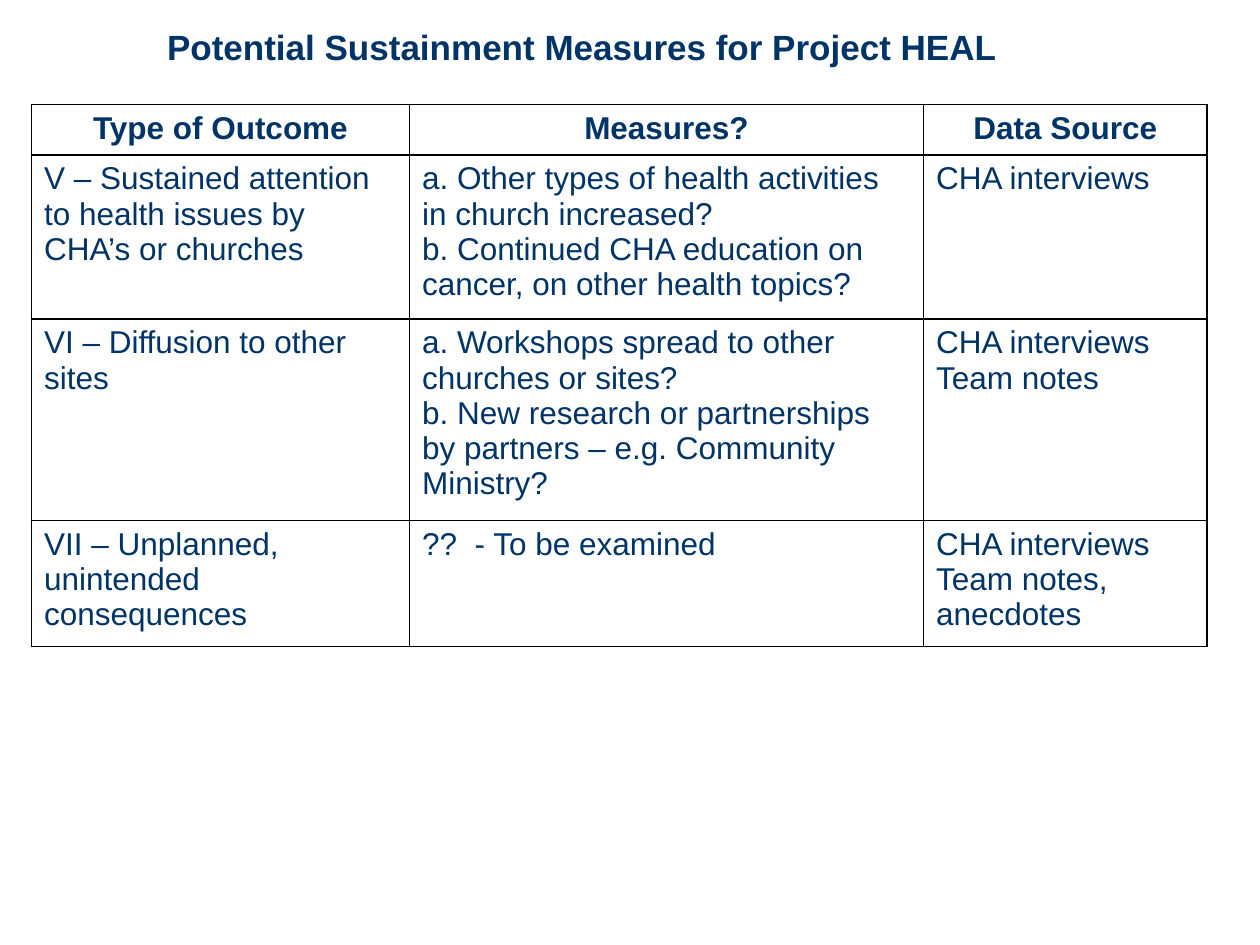
from dataclasses import dataclass

import pptx
import pptx.dml.color
import pptx.enum.text
import pptx.oxml
import pptx.oxml.ns
import pptx.presentation
import pptx.slide
import pptx.table
import pptx.util

Inches = pptx.util.Inches
Pt = pptx.util.Pt
Align = pptx.enum.text.PP_ALIGN


@dataclass(frozen=True)
class Theme:
    font: str = "Arial"
    ink: str = "003366"
    border: str = "000000"
    border_width: int = 1
    title_size: int = 20
    table_size: int = 18


@dataclass(frozen=True)
class Outcome:
    kind: str
    measures: str
    source: str
    height: float

    def texts(self) -> tuple[str, str, str]:
        return self.kind, self.measures, self.source


THEME = Theme()
COLUMN_WIDTHS = (3, 4.08, 2.25)
OUTCOMES = (
    Outcome("Type of Outcome", "Measures?", "Data Source", 0.4),
    Outcome(
        "V – Sustained attention to health issues by CHA’s or churches",
        "a. Other types of health activities in church increased?\n"
        "b. Continued CHA education on cancer, on other health topics?",
        "CHA interviews",
        1.3,
    ),
    Outcome(
        "VI – Diffusion to other sites",
        "a. Workshops spread to other churches or sites?\n"
        "b. New research or partnerships by partners – e.g. Community Ministry?",
        "CHA interviews\nTeam notes",
        1.6,
    ),
    Outcome(
        "VII – Unplanned, unintended consequences",
        "??  - To be examined",
        "CHA interviews\nTeam notes, anecdotes",
        1,
    ),
)


def write(frame: pptx.text.text.TextFrame, text: str, size: int, heading: bool) -> None:
    """Set the text; headings are bold and centred."""
    frame.text = text
    for paragraph in frame.paragraphs:
        paragraph.alignment = Align.CENTER if heading else Align.LEFT
        for run in paragraph.runs:
            run.font.name = THEME.font
            run.font.size = Pt(size)
            run.font.bold = heading
            run.font.color.rgb = pptx.dml.color.RGBColor.from_string(THEME.ink)


def outline(cell: pptx.table._Cell) -> None:
    """Draw the four borders, which must come before the cell's fill."""
    properties = cell._tc.get_or_add_tcPr()
    for position, side in enumerate(("lnL", "lnR", "lnT", "lnB")):
        line = pptx.oxml.parse_xml(
            f'<a:{side} {pptx.oxml.ns.nsdecls("a")} w="{Pt(THEME.border_width)}">'
            f'<a:solidFill><a:srgbClr val="{THEME.border}"/></a:solidFill></a:{side}>'
        )
        properties.insert(position, line)


def add_title(slide: pptx.slide.Slide) -> None:
    title = slide.shapes.title
    title.left, title.top = Inches(0.33), Inches(0.15)
    title.width, title.height = Inches(8.58), Inches(0.44)
    frame = title.text_frame
    write(frame, "Potential Sustainment Measures for Project HEAL", THEME.title_size, True)
    frame.vertical_anchor = pptx.enum.text.MSO_ANCHOR.MIDDLE
    frame.auto_size = pptx.enum.text.MSO_AUTO_SIZE.SHAPE_TO_FIT_TEXT


def add_outcomes(slide: pptx.slide.Slide) -> None:
    table = slide.shapes.add_table(
        len(OUTCOMES), len(COLUMN_WIDTHS), Inches(0.25), Inches(0.83),
        Inches(sum(COLUMN_WIDTHS)), Inches(sum(outcome.height for outcome in OUTCOMES)),
    ).table
    table.horz_banding = False
    for column, width in zip(table.columns, COLUMN_WIDTHS):
        column.width = Inches(width)
    for number, (row, outcome) in enumerate(zip(table.rows, OUTCOMES)):
        row.height = Inches(outcome.height)
        for cell, text in zip(row.cells, outcome.texts()):
            write(cell.text_frame, text, THEME.table_size, heading=number == 0)
            cell.fill.background()
            outline(cell)


def main() -> None:
    deck = pptx.Presentation()
    deck.slide_width, deck.slide_height = Inches(10), Inches(7.5)
    slide = deck.slides.add_slide(deck.slide_layouts.get_by_name("Title Only"))
    add_title(slide)
    add_outcomes(slide)
    deck.save("out.pptx")


if __name__ == "__main__":
    main()
